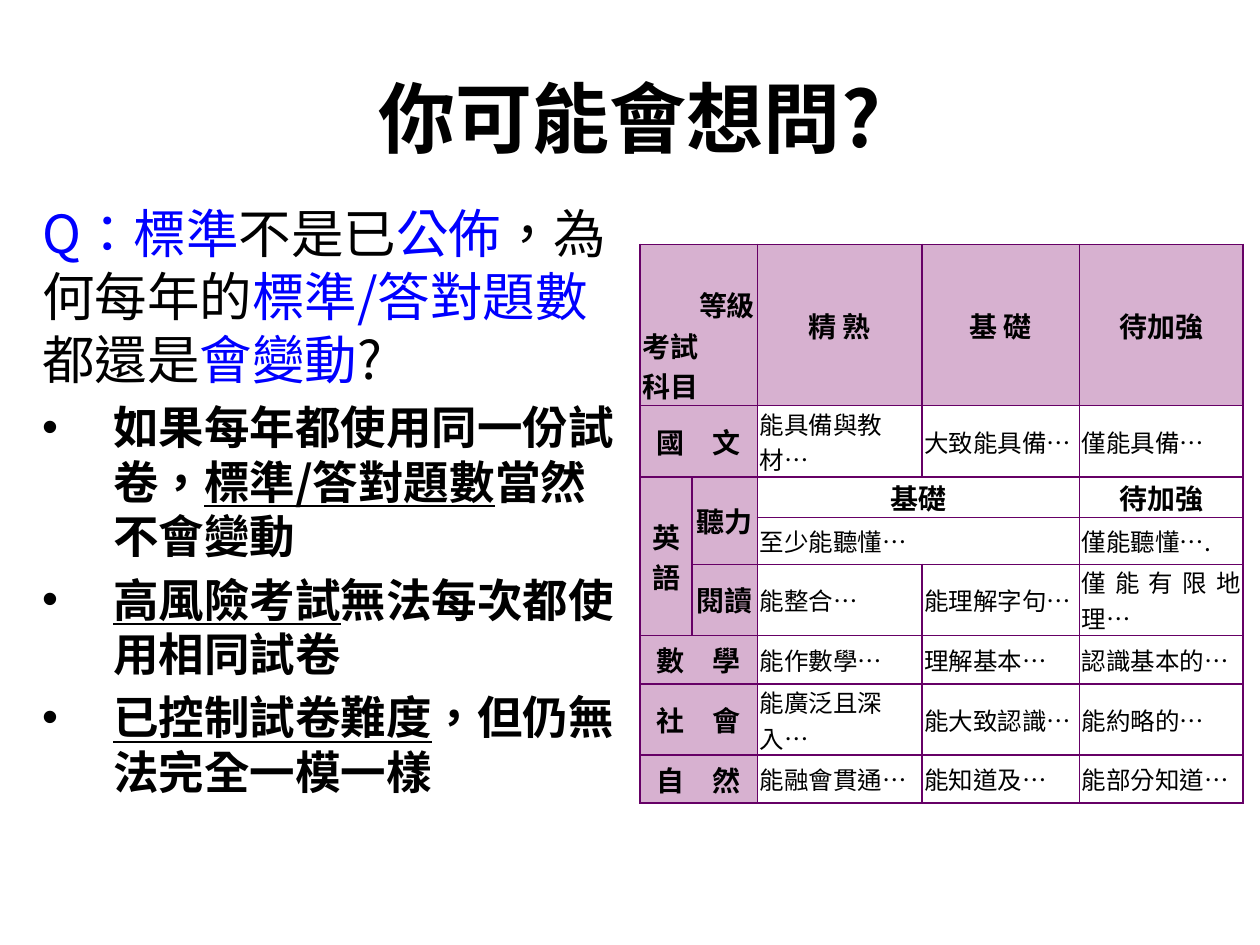
from pptx import Presentation
from pptx.dml.color import RGBColor
from pptx.enum.lang import MSO_LANGUAGE_ID
from pptx.enum.text import MSO_ANCHOR, PP_ALIGN
from pptx.oxml.ns import qn
from pptx.util import Pt
from lxml import etree

LEFT, MID, RIGHT, JUST = PP_ALIGN.LEFT, PP_ALIGN.CENTER, PP_ALIGN.RIGHT, PP_ALIGN.JUSTIFY
CENTER, BOTTOM = MSO_ANCHOR.MIDDLE, MSO_ANCHOR.BOTTOM
TAIWAN = MSO_LANGUAGE_ID.TAIWAN if hasattr(MSO_LANGUAGE_ID, "TAIWAN") else None
BLACK = RGBColor(0x00, 0x00, 0x00)
BLUE = RGBColor(0x00, 0x00, 0xFF)
PINK = RGBColor(0xD7, 0xB1, 0xD0)
PURPLE = RGBColor(0x66, 0x00, 0x66)
FONT = "Noto Sans CJK SC"

ASK = [("Q：標準", True), ("不是已", False), ("公佈", True), ("，為何每年的", False),
       ("標準/答對題數", True), ("都還是", False), ("會變動", True), ("?", False)]
POINTS = [
    [("如果每年都使用同一份試卷，", False), ("標準/答對題數", True), ("當然不會變動", False)],
    [("高風險考試", True), ("無法每次都使用相同試卷", False)],
    [("已控制試卷難度", True), ("，但仍無法完全一模一樣", False)],
]
COLS = [29.5, 37.5, 94, 90, 93.6]
ROWS = [92, 41, 23, 26.8, 40.6, 27.8, 40.6, 27.4]
SPANS = [(0, 0, 0, 1), (1, 0, 1, 1), (2, 0, 4, 0), (2, 1, 3, 1), (2, 2, 2, 3),
         (3, 2, 3, 3), (5, 0, 5, 1), (6, 0, 6, 1), (7, 0, 7, 1)]
HEADS = {
    (0, 2): "精 熟", (0, 3): "基 礎", (0, 4): "待加強",
    (1, 0): "國　文", (2, 0): "英語", (2, 1): "聽力", (2, 2): "基礎", (2, 4): "待加強",
    (4, 1): "閱讀", (5, 0): "數　學", (6, 0): "社　會", (7, 0): "自　然",
}
NOTES = {
    1: ["能具備與教材…", "大致能具備…", "僅能具備…"],
    3: ["至少能聽懂…", "", "僅能聽懂…."],
    4: ["能整合…", "能理解字句…", "僅能有限地理…"],
    5: ["能作數學…", "理解基本…", "認識基本的…"],
    6: ["能廣泛且深入…", "能大致認識…", "能約略的…"],
    7: ["能融會貫通…", "能知道及…", "能部分知道…"],
}


def write(para, text, size, color=BLACK, bold=False, line=False, align=None):
    if align is not None:
        para.alignment = align
    run = para.add_run()
    run.text = text
    font = run.font
    font.size, font.bold, font.underline = Pt(size), bold, line
    font.name = FONT
    font.color.rgb = color
    props = run._r.get_or_add_rPr()
    props.set("lang", "zh-TW")
    etree.SubElement(props, qn("a:ea")).set("typeface", FONT)


def bullet(para):
    props = para._p.get_or_add_pPr()
    props.set("marL", str(Pt(40.5)))
    props.set("indent", str(Pt(-40.5)))
    etree.SubElement(props, qn("a:buFont")).set("typeface", "Arial")
    etree.SubElement(props, qn("a:buChar")).set("char", "•")


def edge(cell):
    props = cell._tc.get_or_add_tcPr()
    for spot, side in enumerate(("lnL", "lnR", "lnT", "lnB")):
        line = etree.Element(qn(f"a:{side}"), w=str(Pt(1)))
        fill = etree.SubElement(line, qn("a:solidFill"))
        etree.SubElement(fill, qn("a:srgbClr")).set("val", str(PURPLE))
        props.insert(spot, line)


def add_title(slide):
    title = slide.shapes.title
    title.left, title.top, title.width, title.height = Pt(36), Pt(21.6), Pt(648), Pt(90)
    title.text_frame.vertical_anchor = CENTER
    write(title.text_frame.paragraphs[0], "你可能會想問?", 44, bold=True, align=MID)


def add_body(slide):
    box = slide.shapes.add_textbox(Pt(17), Pt(111.6), Pt(343.4), Pt(388.8))
    frame = box.text_frame
    frame.word_wrap = True
    para = frame.paragraphs[0]
    for text, key in ASK:
        write(para, text, 30, color=BLUE if key else BLACK)
    for point in POINTS:
        para = frame.add_paragraph()
        bullet(para)
        para.space_before = Pt(5)
        for text, key in point:
            write(para, text, 26, bold=True, line=key)


def add_grid(slide):
    shape = slide.shapes.add_table(len(ROWS), len(COLS), Pt(365.8), Pt(139.7),
                                   Pt(sum(COLS)), Pt(sum(ROWS)))
    table = shape.table
    table.first_row = table.horz_banding = False
    for col, width in zip(table.columns, COLS):
        col.width = Pt(width)
    for row, height in zip(table.rows, ROWS):
        row.height = Pt(height)
    for top, left, low, right in SPANS:
        table.cell(top, left).merge(table.cell(low, right))
    for r in range(len(ROWS)):
        for c in range(len(COLS)):
            cell = table.cell(r, c)
            cell.margin_left = cell.margin_right = Pt(1.4)
            cell.margin_top = cell.margin_bottom = Pt(0)
            cell.vertical_anchor = CENTER
            if r == 0 or c < 2:
                cell.fill.solid()
                cell.fill.fore_color.rgb = PINK
            else:
                cell.fill.background()
            edge(cell)
            para = cell.text_frame.paragraphs[0]
            if (r, c) in HEADS:
                write(para, HEADS[r, c], 16, bold=True, align=MID)
            elif c > 1 and r in NOTES and NOTES[r][c - 2]:
                write(para, NOTES[r][c - 2], 14, align=JUST if r in (3, 4) else LEFT)
    corner = table.cell(0, 0)
    corner.vertical_anchor = BOTTOM
    frame = corner.text_frame
    write(frame.paragraphs[0], "等級", 16, bold=True, align=RIGHT)
    for text in ("考試", "科目"):
        write(frame.add_paragraph(), text, 16, bold=True, align=LEFT)


def main():
    deck = Presentation()
    deck.slide_width, deck.slide_height = Pt(720), Pt(540)
    slide = deck.slides.add_slide(deck.slide_layouts[5])
    add_title(slide)
    add_body(slide)
    add_grid(slide)
    deck.save("out.pptx")


if __name__ == "__main__":
    main()
